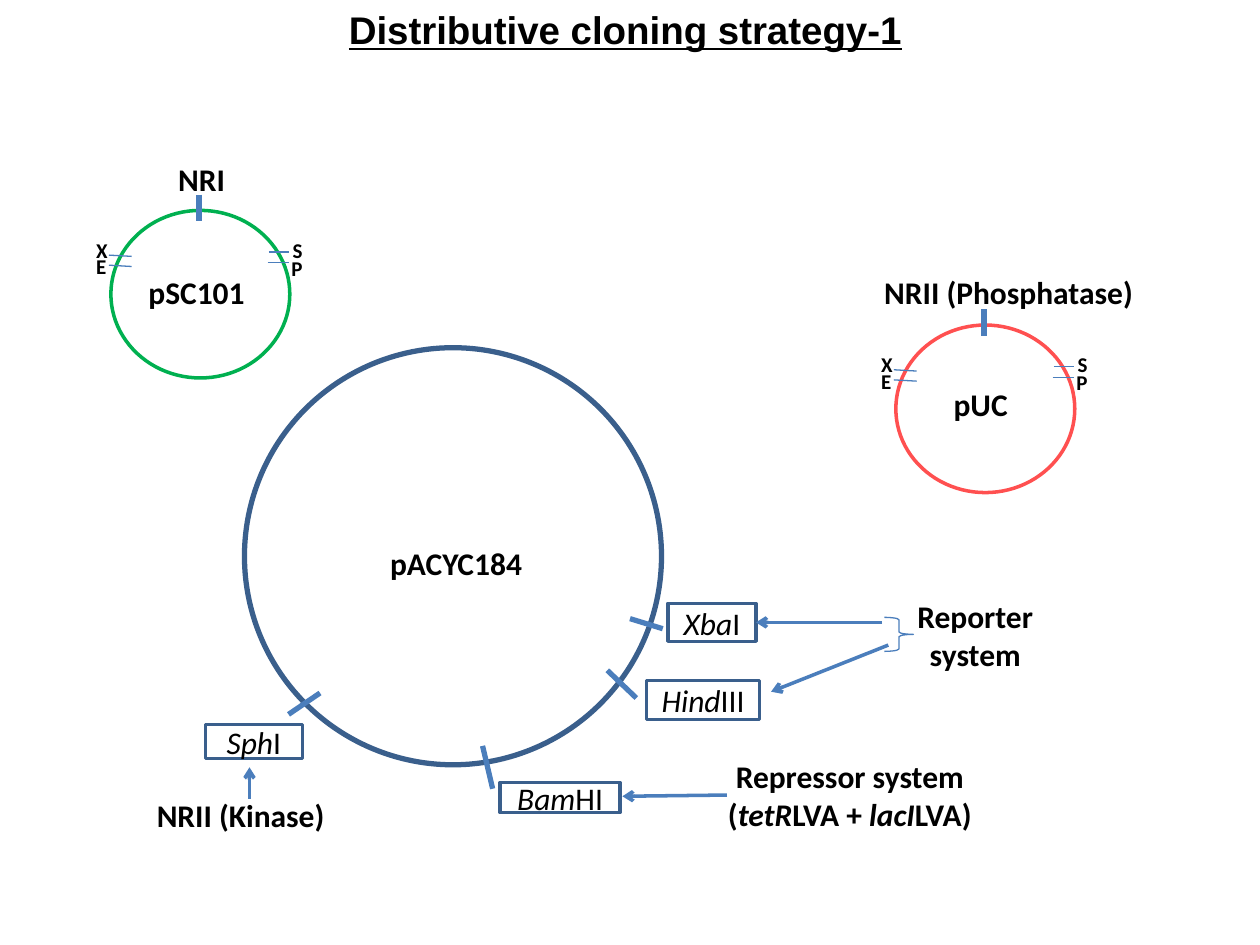
from lxml.etree import SubElement
from pptx import Presentation
from pptx.dml.color import RGBColor
from pptx.enum.shapes import MSO_CONNECTOR as Connector, MSO_SHAPE as Shape
from pptx.enum.text import MSO_ANCHOR as Anchor, MSO_AUTO_SIZE as AutoSize, PP_ALIGN as Align
from pptx.oxml.ns import qn
from pptx.util import Inches, Pt

NAVY, BLUE, GREEN, RED, BLACK = "3A5F8C", "4B7EBC", "00B050", "FF5050", "000000"
color = RGBColor.from_string

presentation = Presentation()
presentation.slide_width = Inches(10)
presentation.slide_height = Inches(7.5)
slide = presentation.slides.add_slide(presentation.slide_layouts[6])
CELL = presentation.slide_width / 100


def write(frame, text, size=18, font="Calibri", bold=True, underline=None,
          align=Align.CENTER, wrap=True, anchor=Anchor.TOP, fit=AutoSize.SHAPE_TO_FIT_TEXT):
    frame.word_wrap = wrap
    frame.auto_size = fit
    frame.vertical_anchor = anchor
    paragraph = frame.paragraphs[0]
    paragraph.alignment = align
    for index, part in enumerate(text.split("*")):
        if part:
            run = paragraph.add_run()
            run.text = part
            run.font.size = Pt(size)
            run.font.name = font
            run.font.bold = bold
            run.font.italic = index % 2 == 1
            run.font.underline = underline
            run.font.color.rgb = color(BLACK)


def connect(ends, width, arrow=False):
    connector = slide.shapes.add_connector(Connector.STRAIGHT, *[round(end * CELL) for end in ends])
    connector.line.color.rgb = color(BLUE)
    connector.line.width = Pt(width)
    if arrow:
        SubElement(connector.line._get_or_add_ln(), qn("a:tailEnd"), type="arrow")
    SubElement(connector._element.spPr, qn("a:effectLst"))
    return connector


plasmids = [
    (8.8, 16.7, GREEN),
    (71.1, 25.8, RED),
]

outlines = [
    (Shape.OVAL, (19.4, 27.6, 33.1, 33.1), NAVY, 3, ""),
    (Shape.RIGHT_BRACE, (70.2, 49, 2.3, 2.7), BLUE, 0.75, ""),
    (Shape.RECTANGLE, (16.3, 57.5, 7.7, 2.7), NAVY, 2, "*Sph*I"),
    (Shape.RECTANGLE, (39.7, 62.1, 9.5, 2.4), NAVY, 2, "*Bam*HI"),
    (Shape.RECTANGLE, (51.3, 54, 9, 3.1), NAVY, 2, "*Hind*III"),
    (Shape.RECTANGLE, (53, 47.9, 7, 3), NAVY, 2, "*Xba*I"),
]
for left, top, ring_color in plasmids:
    outlines.append((Shape.OVAL, (left, top, 14.2, 13.3), ring_color, 2, ""))

sites = {}
for kind, box, line_color, width, text in outlines:
    shape = slide.shapes.add_shape(kind, *[round(length * CELL) for length in box])
    shape.shadow.inherit = False
    shape.fill.background()
    shape.line.color.rgb = color(line_color)
    shape.line.width = Pt(width)
    if text:
        write(shape.text_frame, text, bold=False, anchor=Anchor.MIDDLE, fit=AutoSize.NONE)
        sites[text] = shape

cut_marks = [(25.4, 55, 22.9, 56.7), (38.3, 59.2, 39.1, 62.6),
             (48.2, 53.2, 50.5, 55.4), (50, 49.1, 52.6, 49.9)]
for mark in cut_marks:
    connect(mark, 3)

xba_arrow = connect((70, 49.4, 60, 49.4), 2, arrow=True)
xba_arrow.end_connect(sites["*Xba*I"], 3)
for ends in [(70.5, 51.2, 61.2, 54.9), (57.7, 63.1, 49.4, 63.2), (19.8, 63.4, 19.8, 60.9)]:
    connect(ends, 2, arrow=True)

natural = dict(align=Align.LEFT, wrap=False)
labels = [
    ((26.7, 0, 46.5, 4.7), "Distributive cloning strategy-1",
     dict(natural, size=22, font="Arial", underline=True)),
    ((71.5, 46.9, 11.8, 7.1), "Reporter system", {}),
    ((56.6, 59.6, 21.7, 7.1), "Repressor system (*tetR*LVA + *lacI*LVA)", {}),
    ((10, 62.7, 18.2, 2.5), "NRII (Kinase)", {}),
    ((29.9, 42.7, 12.6, 4), "pACYC184", {}),
    ((10.8, 21.2, 9.7, 4), "pSC101", natural),
    ((10.8, 12.2, 10.4, 4), "NRI", {}),
    ((74.7, 30.1, 6.3, 4), "pUC", natural),
    ((65.8, 21.2, 28.5, 4), "NRII (Phosphatase)", {}),
]

for left, top, ring_color in plasmids:
    connect((left + 7, top - 1.25, left + 7, top + 0.85), 3)
    for row in (3.55, 4.35):
        connect((left - 0.15, top + row, left + 1.65, top + row + 0.1), 0.75)
    for column, row in [(12.55, 3.3), (12.45, 4.15)]:
        connect((left + column, top + row, left + 14.15, top + row), 0.75)
    for letter, column, row in [("S", 13.45, 1.65), ("P", 13.35, 3.05),
                                ("X", -2.15, 1.65), ("E", -2.15, 2.95)]:
        labels.append(((left + column, top + row, 2.85, 3), letter, dict(natural, size=12)))

for box, text, style in labels:
    text_box = slide.shapes.add_textbox(*[round(length * CELL) for length in box])
    write(text_box.text_frame, text, **style)

presentation.save("out.pptx")
